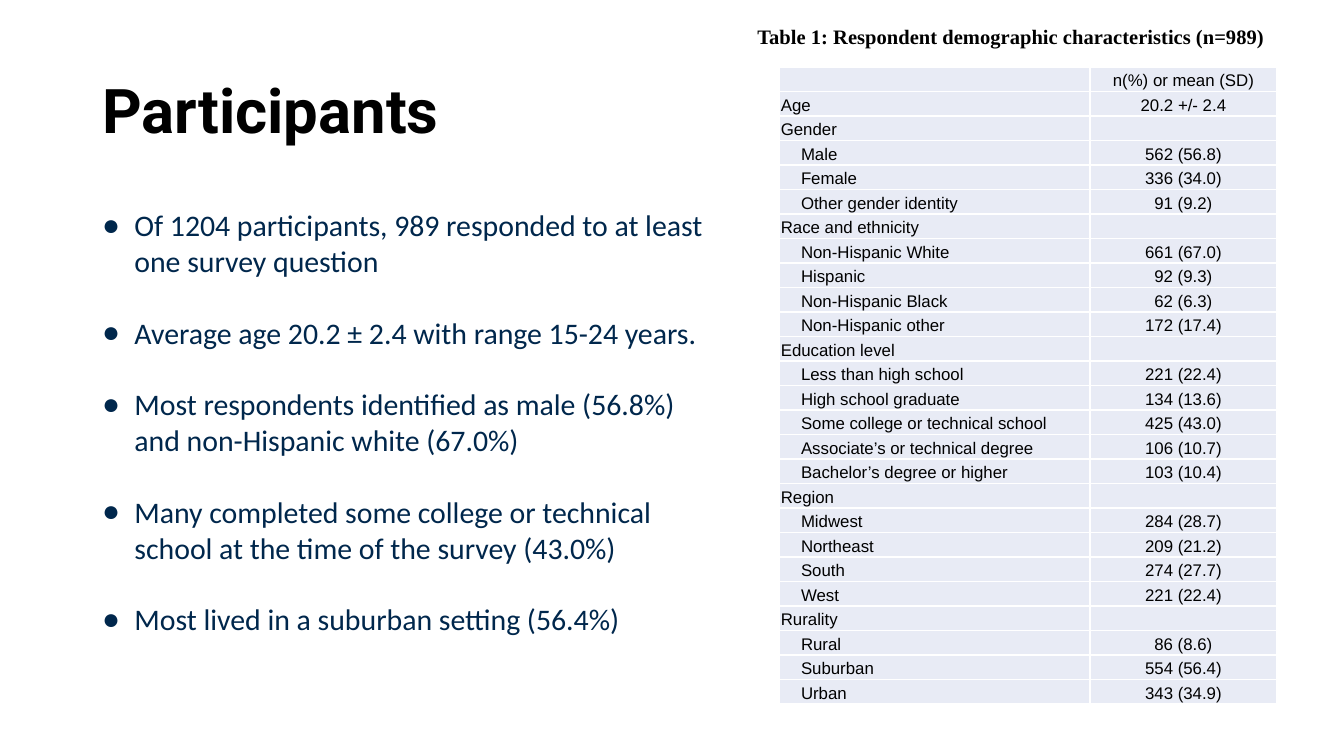
"""Build the Participants slide with its findings and demographic table."""
from dataclasses import dataclass

from lxml import etree
from pptx import Presentation
from pptx.dml.color import RGBColor
from pptx.enum.text import MSO_ANCHOR, MSO_AUTO_SIZE, PP_ALIGN
from pptx.oxml.ns import qn
from pptx.util import Emu, Inches, Pt

MIDDLE, TOP = MSO_ANCHOR.MIDDLE, MSO_ANCHOR.TOP
CENTER, LEFT = PP_ALIGN.CENTER, PP_ALIGN.LEFT
NO_AUTOFIT = MSO_AUTO_SIZE.NONE
TITLE_ONLY = 5
SLIDE_WIDTH = Inches(10)
SLIDE_HEIGHT = Emu(SLIDE_WIDTH * 9 // 16)
COLORS = {"black": "000000", "navy": "00274C", "cell": "E8EBF5", "border": "FFFFFF"}
BORDERS = ("a:lnL", "a:lnR", "a:lnT", "a:lnB")


@dataclass(frozen=True)
class Box:
    """A frame in percent of the slide's width and height."""
    left: float
    top: float
    width: float
    height: float

    def frame(self) -> tuple[Emu, Emu, Emu, Emu]:
        """Return left, top, width and height as lengths."""
        return (Emu(round(SLIDE_WIDTH * self.left / 100)),
                Emu(round(SLIDE_HEIGHT * self.top / 100)),
                Emu(round(SLIDE_WIDTH * self.width / 100)),
                Emu(round(SLIDE_HEIGHT * self.height / 100)))


@dataclass(frozen=True)
class TextStyle:
    """The look of a run."""
    font: str
    size: float
    color: str
    bold: bool = False


@dataclass(frozen=True)
class Row:
    """A table row; a level of one indents its label."""
    label: str
    value: str = ""
    level: int = 1


TITLE_BOX = Box(6.9, 5.33, 86.2, 19.38)
FINDINGS_BOX = Box(6.9, 26.67, 47.5, 63.47)
TABLE_BOX = Box(58, 8.89, 37, 84.3)
CAPTION_BOX = Box(55.65, 2.49, 43.9, 4.62)
COLUMN_WEIGHTS = (2.31, 1.39)

TITLE_STYLE = TextStyle("Roboto", 33, "black", True)
FINDING_STYLE = TextStyle("Calibri", 16, "navy")
CELL_STYLE = TextStyle("Arial", 9, "black")
CAPTION_STYLE = TextStyle("Times New Roman", 11, "black", True)

FINDINGS = (
    "Of 1204 participants, 989 responded to at least one survey question",
    "Average age 20.2 ± 2.4 with range 15-24 years.",
    "Most respondents identified as male (56.8%) and non-Hispanic white (67.0%)",
    "Many completed some college or technical school at the time of the survey (43.0%)",
    "Most lived in a suburban setting (56.4%)",
)
ROWS = (
    Row("", "n(%) or mean (SD)", 0),
    Row("Age", "20.2 +/- 2.4", 0),
    Row("Gender", level=0),
    Row("Male", "562 (56.8)"),
    Row("Female", "336 (34.0)"),
    Row("Other gender identity", "91 (9.2)"),
    Row("Race and ethnicity", level=0),
    Row("Non-Hispanic White", "661 (67.0)"),
    Row("Hispanic", "92 (9.3)"),
    Row("Non-Hispanic Black", "62 (6.3)"),
    Row("Non-Hispanic other", "172 (17.4)"),
    Row("Education level", level=0),
    Row("Less than high school", "221 (22.4)"),
    Row("High school graduate", "134 (13.6)"),
    Row("Some college or technical school", "425 (43.0)"),
    Row("Associate’s or technical degree", "106 (10.7)"),
    Row("Bachelor’s degree or higher", "103 (10.4)"),
    Row("Region", level=0),
    Row("Midwest", "284 (28.7)"),
    Row("Northeast", "209 (21.2)"),
    Row("South", "274 (27.7)"),
    Row("West", "221 (22.4)"),
    Row("Rurality", level=0),
    Row("Rural", "86 (8.6)"),
    Row("Suburban", "554 (56.4)"),
    Row("Urban", "343 (34.9)"),
)


def add_run(paragraph, text: str, style: TextStyle) -> None:
    """Append one styled run."""
    run = paragraph.add_run()
    run.text = text
    run.font.name = style.font
    run.font.size = Pt(style.size)
    run.font.bold = style.bold
    run.font.color.rgb = RGBColor.from_string(COLORS[style.color])


def prepare_frame(shape, anchor):
    """Set wrapping, insets and anchor, and return the text frame."""
    frame = shape.text_frame
    frame.word_wrap = True
    frame.auto_size = NO_AUTOFIT
    frame.vertical_anchor = anchor
    frame.margin_left = frame.margin_right = Inches(0.07)
    frame.margin_top = frame.margin_bottom = Inches(0.04)
    return frame


def add_text_box(slide, box: Box):
    """Add a text box and return its text frame."""
    return prepare_frame(slide.shapes.add_textbox(*box.frame()), TOP)


def set_title(slide, text: str) -> None:
    """Place and format the title placeholder."""
    title = slide.shapes.title
    title.left, title.top, title.width, title.height = TITLE_BOX.frame()
    paragraph = prepare_frame(title, MIDDLE).paragraphs[0]
    paragraph.alignment = LEFT
    paragraph.line_spacing = 0.9
    add_run(paragraph, text, TITLE_STYLE)


def add_bullet(paragraph, color: str) -> None:
    """Give a paragraph a hanging round bullet."""
    properties = paragraph._p.get_or_add_pPr()
    properties.set("marL", str(Inches(0.24)))
    properties.set("indent", str(-Inches(0.24)))
    bullet_color = etree.SubElement(properties, qn("a:buClr"))
    etree.SubElement(bullet_color, qn("a:srgbClr"), val=COLORS[color])
    etree.SubElement(properties, qn("a:buFont"), typeface="Arial")
    etree.SubElement(properties, qn("a:buChar"), char="●")


def add_findings(slide) -> None:
    """Add the bulleted findings."""
    frame = add_text_box(slide, FINDINGS_BOX)
    for index, finding in enumerate(FINDINGS):
        paragraph = frame.add_paragraph() if index else frame.paragraphs[0]
        add_bullet(paragraph, FINDING_STYLE.color)
        if index:
            paragraph.space_before = Pt(19.2)
        add_run(paragraph, finding, FINDING_STYLE)


def add_borders(cell) -> None:
    """Draw thin lines on all sides of a cell."""
    properties = cell._tc.get_or_add_tcPr()
    for position, tag in enumerate(BORDERS):
        line = etree.Element(qn(tag), w=str(Pt(1)))
        fill = etree.SubElement(line, qn("a:solidFill"))
        etree.SubElement(fill, qn("a:srgbClr"), val=COLORS["border"])
        properties.insert(position, line)


def fill_cell(cell, text: str, alignment, level: int = 0) -> None:
    """Format a cell and write its text."""
    cell.fill.solid()
    cell.fill.fore_color.rgb = RGBColor.from_string(COLORS["cell"])
    add_borders(cell)
    cell.vertical_anchor = MIDDLE
    cell.margin_left = cell.margin_right = Inches(0.01)
    cell.margin_top = cell.margin_bottom = Pt(0.6)
    paragraph = cell.text_frame.paragraphs[0]
    paragraph.alignment = alignment
    paragraph.line_spacing = 1.15
    paragraph._p.get_or_add_pPr().set("marL", str(Inches(0.15) * level))
    if text:
        add_run(paragraph, text, CELL_STYLE)
    else:
        etree.SubElement(paragraph._p, qn("a:endParaRPr"), sz=str(CELL_STYLE.size * 100))


def add_demographics(slide) -> None:
    """Add the demographic table."""
    left, top, width, height = TABLE_BOX.frame()
    table = slide.shapes.add_table(len(ROWS), len(COLUMN_WEIGHTS), left, top, width, height).table
    for column, weight in zip(table.columns, COLUMN_WEIGHTS):
        column.width = Emu(round(width * weight / sum(COLUMN_WEIGHTS)))
    for index, row in enumerate(ROWS):
        fill_cell(table.cell(index, 0), row.label, LEFT, row.level)
        fill_cell(table.cell(index, 1), row.value, CENTER)


def main() -> None:
    """Build and save the presentation."""
    presentation = Presentation()
    presentation.slide_width, presentation.slide_height = SLIDE_WIDTH, SLIDE_HEIGHT
    slide = presentation.slides.add_slide(presentation.slide_layouts[TITLE_ONLY])
    set_title(slide, "Participants")
    add_findings(slide)
    add_demographics(slide)
    caption = add_text_box(slide, CAPTION_BOX).paragraphs[0]
    add_run(caption, "Table 1: Respondent demographic characteristics (n=989)", CAPTION_STYLE)
    presentation.save("out.pptx")


if __name__ == "__main__":
    main()
